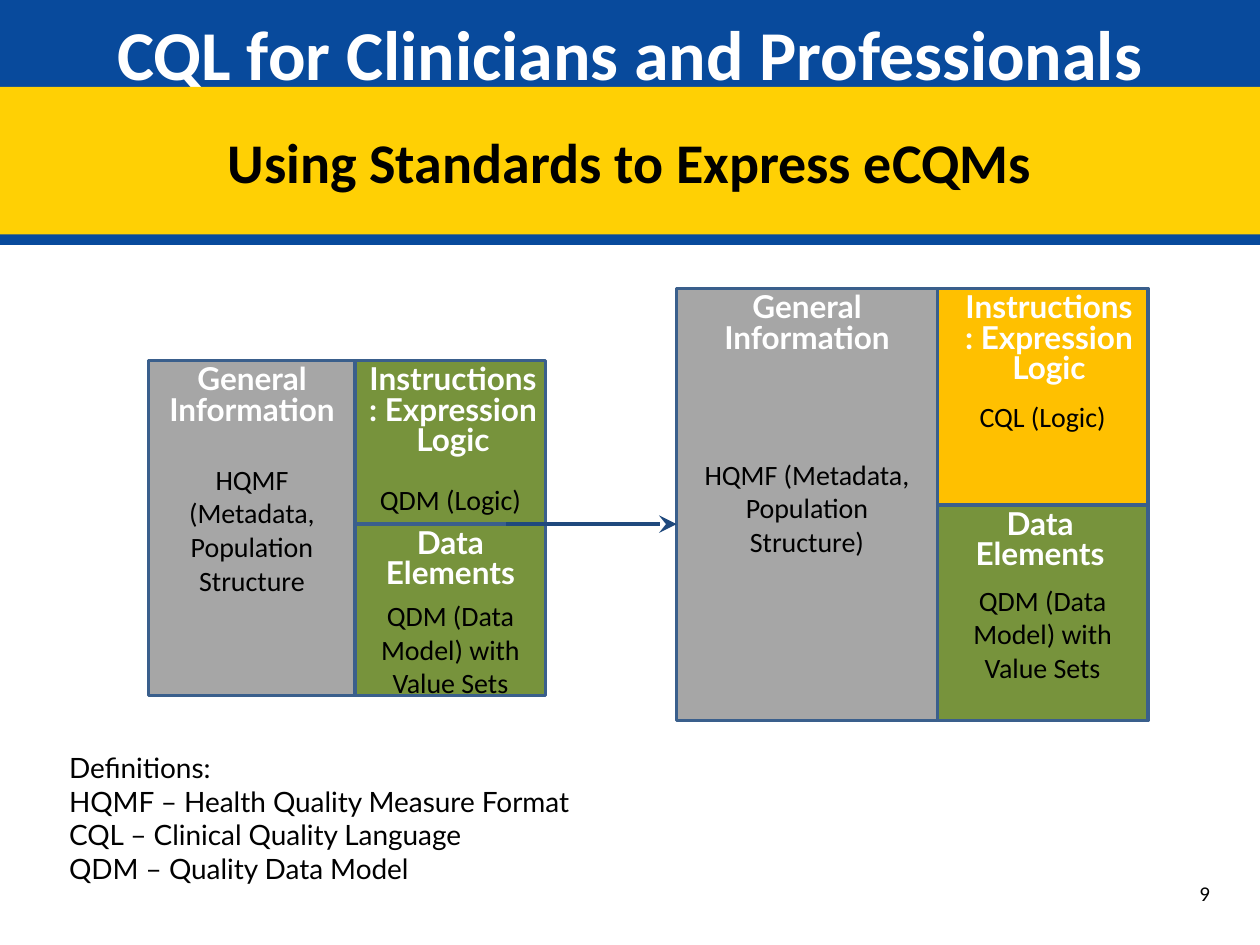
from lxml import etree
from pptx import Presentation
from pptx.dml.color import RGBColor
from pptx.enum import shapes, text
from pptx.oxml import ns
from pptx.util import Inches, Pt

BLUE = RGBColor(0x08, 0x4A, 0x9C)
YELLOW = RGBColor(0xFF, 0xD0, 0x04)
GREY = RGBColor(0xA6, 0xA6, 0xA6)
GREEN = RGBColor(0x77, 0x93, 0x3C)
AMBER = RGBColor(0xFF, 0xC0, 0x00)
OUTLINE = RGBColor(0x3A, 0x5F, 0x8C)
NAVY = RGBColor(0x1F, 0x49, 0x7D)
WHITE = RGBColor(0xFF, 0xFF, 0xFF)
BLACK = RGBColor(0, 0, 0)
CENTER = text.PP_ALIGN.CENTER
TOP, MIDDLE = text.MSO_ANCHOR.TOP, text.MSO_ANCHOR.MIDDLE


def write(sp, content, size, font, color, bold=False, align=None, spacing=None, anchor=TOP):
    """Fill a shape with text in one style."""
    tf = sp.text_frame
    tf.text = content
    tf.word_wrap = True
    tf.vertical_anchor = anchor
    for p in tf.paragraphs:
        p.alignment = align
        p.line_spacing = spacing
        for r in p.runs:
            r.font.size = Pt(size)
            r.font.name = font
            r.font.bold = bold
            r.font.color.rgb = color


def add_text(s, box, *args, **style):
    """Add a text box that grows with its text."""
    sp = s.shapes.add_textbox(*map(Inches, box))
    write(sp, *args, **style)
    sp.text_frame.auto_size = text.MSO_AUTO_SIZE.SHAPE_TO_FIT_TEXT


def add_rect(s, box, fill):
    """Add a filled rectangle without shadow."""
    sp = s.shapes.add_shape(shapes.MSO_SHAPE.RECTANGLE, *map(Inches, box))
    sp.shadow.inherit = False
    sp.fill.solid()
    sp.fill.fore_color.rgb = fill
    return sp


def drop_edge(sp, color):
    """Give a shape a hard shadow straight below it."""
    sp.shadow.inherit = False
    effects = sp._element.spPr.find(ns.qn("a:effectLst"))
    shadow = etree.SubElement(effects, ns.qn("a:outerShdw"), dist=str(Pt(6)), dir="5400000",
                              algn="t", rotWithShape="0")
    etree.SubElement(shadow, ns.qn("a:srgbClr"), val=str(color))


def add_header(s, height, band_top, band_height):
    """Place the title and the subtitle band across the slide."""
    title = s.shapes.title
    title.left, title.top, title.width, title.height = map(Inches, (0, 0, 10, height))
    title.fill.solid()
    title.fill.fore_color.rgb = BLUE
    drop_edge(title, YELLOW)
    write(title, "CQL for Clinicians and Professionals", 40, "Calibri", WHITE, True, CENTER)
    title.text_frame.margin_top = Inches(0.08)
    band = add_rect(s, (0, band_top, 10, band_height), YELLOW)
    band.line.fill.background()
    drop_edge(band, BLUE)
    write(band, "Using Standards to Express eCQMs", 32, "Calibri", BLACK, True, CENTER,
          anchor=MIDDLE)


def add_panel(s, box, fill, heading, body, body_top, shift=0, heading_w=1.52):
    """Add a panel with a heading at its top and body text below."""
    left, top, width, height = box
    sp = add_rect(s, box, fill)
    sp.line.color.rgb = OUTLINE
    sp.line.width = Pt(2)
    write(sp, body, 16, "Calibri", BLACK, align=CENTER)
    sp.text_frame.margin_top = Inches(body_top)
    sp.text_frame.margin_bottom = 0
    heading_left = left + (width - heading_w) / 2 + shift
    add_text(s, (heading_left, top, heading_w, 0.59), heading, 18, "Lato", WHITE, True,
             CENTER, 0.8)


def add_measure(s, box, info_w, logic_h, info, logic, data, logic_shift, data_shift=0):
    """Place the information, logic and data panels of one measure in a box."""
    left, top, width, height = box
    side, side_w = left + info_w, width - info_w
    add_panel(s, (left, top, info_w, height), GREY, "General Information", *info)
    add_panel(s, (side, top, side_w, logic_h), logic[0], "Instructions: Expression Logic",
              *logic[1:], logic_shift, 1.55)
    add_panel(s, (side, top + logic_h, side_w, height - logic_h), GREEN, "Data Elements",
              "QDM (Data Model) with Value Sets", data, data_shift)


def add_arrow(s, start, end, y):
    """Draw the arrow from the old measure to the new one."""
    line = s.shapes.add_connector(shapes.MSO_CONNECTOR.STRAIGHT, Inches(start), Inches(y),
                                  Inches(end), Inches(y))
    line.line.color.rgb = NAVY
    line.line.width = Pt(2)
    etree.SubElement(line.line._get_or_add_ln(), ns.qn("a:tailEnd"), type="stealth",
                     w="lg", len="lg")
    etree.SubElement(line._element.spPr, ns.qn("a:effectLst"))


def main():
    """Build and save the slide."""
    prs = Presentation()
    prs.slide_width, prs.slide_height = Inches(10), Inches(7.5)
    s = prs.slides.add_slide(prs.slide_layouts[5])
    add_header(s, 1.47, 0.69, 1.17)
    add_measure(s, (1.18, 2.86, 3.15, 2.66), 1.64, 1.3,
                ("HQMF (Metadata, Population Structure", 0.81),
                (GREEN, "QDM (Logic)", 0.97), 0.59, 0.02)
    add_measure(s, (5.37, 2.29, 3.74, 3.43), 2.07, 1.72,
                ("HQMF (Metadata, Population Structure)", 1.34),
                (AMBER, "CQL (Logic)", 0.88), 0.62, 0.05, -0.02)
    add_arrow(s, 4.02, 5.37, 4.16)
    definitions = ("Definitions:", "HQMF – Health Quality Measure Format",
                   "CQL – Clinical Quality Language", "QDM – Quality Data Model")
    add_text(s, (0.45, 5.91, 7.91, 1.21), "\n".join(definitions), 16, "Lato", BLACK)
    add_text(s, (9.42, 6.94, 0.5, 0.3), "9", 12, "Calibri", BLACK)
    prs.save("out.pptx")


if __name__ == "__main__":
    main()
